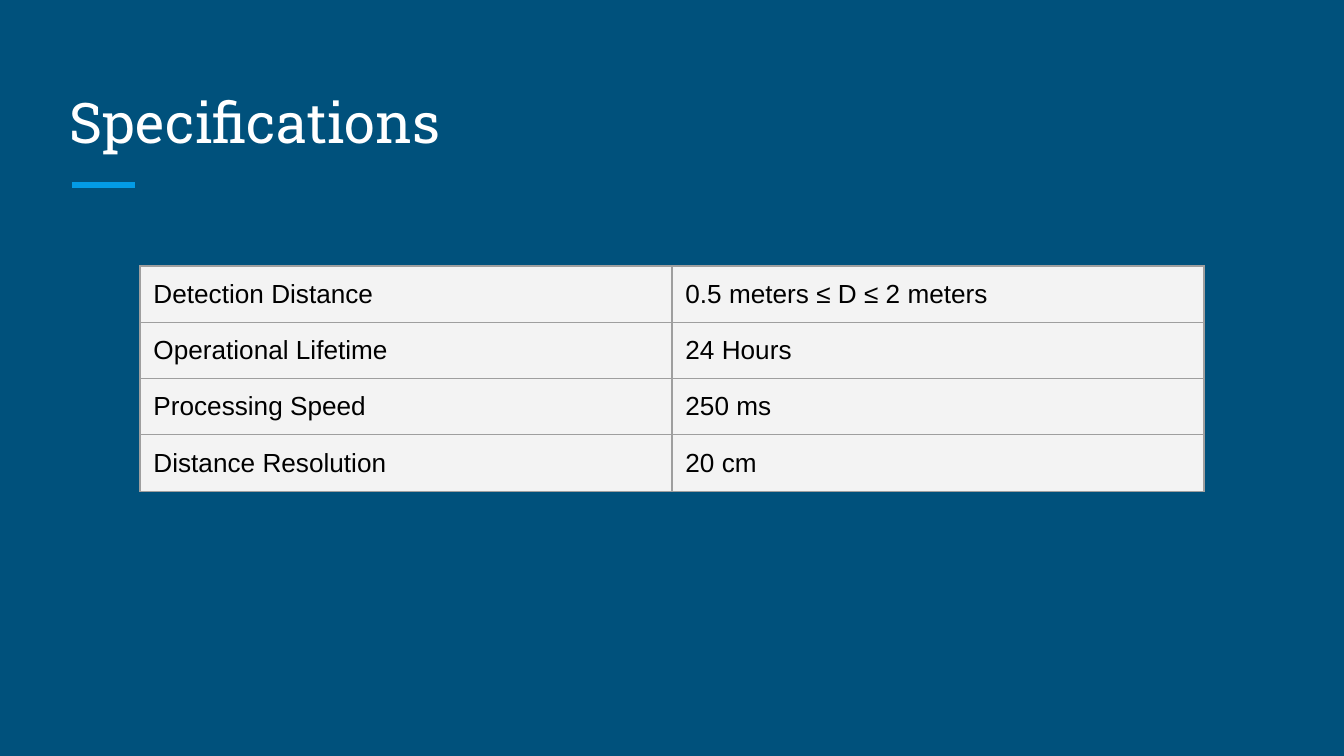
"""Build the Specifications slide: a title, an accent rule and a table."""
from lxml import etree
from pptx import Presentation
from pptx.dml.color import RGBColor
from pptx.enum.shapes import MSO_CONNECTOR
from pptx.enum.text import MSO_ANCHOR, PP_ALIGN
from pptx.oxml.ns import qn
from pptx.util import Emu, Pt

TITLE = "Specifications"
SPECIFICATIONS = [
    ("Detection Distance", "0.5 meters ≤ D ≤ 2 meters"),
    ("Operational Lifetime", "24 Hours"),
    ("Processing Speed", "250 ms"),
    ("Distance Resolution", "20 cm"),
]
COLORS = {
    "background": "00517C",
    "accent": "039BE5",
    "title": "FFFFFF",
    "text": "000000",
    "cell": "F3F3F3",
    "border": "9E9E9E",
}
SLIDE_SIZE = (1344, 756)
TITLE_BOX = (56, 67, 1230, 101)
ACCENT_LINE = (72, 185, 135, 185)
TABLE_LEFT, TABLE_TOP = 140, 266
COLUMN_WIDTH, ROW_HEIGHT = 532, 56
TITLE_ONLY = 5
STRAIGHT = MSO_CONNECTOR.STRAIGHT
BOTTOM, TOP = MSO_ANCHOR.BOTTOM, MSO_ANCHOR.TOP
LEFT = PP_ALIGN.LEFT


def px(length):
    """Turn pixels into EMU."""
    return Emu(round(length * 914400 / 134.4))


def color(name):
    """Look up a palette color."""
    return RGBColor.from_string(COLORS[name])


def write(frame, text, *, font, size, fill):
    """Put one formatted, left-aligned paragraph in a text frame."""
    para = frame.paragraphs[0]
    para.alignment = LEFT
    span = para.add_run()
    span.text = text
    span.font.name = font
    span.font.size = Pt(size)
    span.font.color.rgb = color(fill)


def set_margins(box):
    """Give a cell or text frame equal margins."""
    box.margin_left = box.margin_right = Pt(7.2)
    box.margin_top = box.margin_bottom = Pt(7.2)


def add_borders(cell):
    """Draw a thin line on all four sides of a cell."""
    properties = cell._tc.get_or_add_tcPr()
    for side in ("lnL", "lnR", "lnT", "lnB"):
        line = etree.SubElement(properties, qn(f"a:{side}"), w=str(Pt(0.75)))
        fill = etree.SubElement(line, qn("a:solidFill"))
        etree.SubElement(fill, qn("a:srgbClr"), val=COLORS["border"])


def add_title(page):
    """Place the title and the accent line below it."""
    title = page.shapes.title
    title.left, title.top, title.width, title.height = map(px, TITLE_BOX)
    frame = title.text_frame
    frame.word_wrap = True
    frame.vertical_anchor = BOTTOM
    set_margins(frame)
    write(frame, TITLE, font="Roboto Slab", size=30, fill="title")

    accent = page.shapes.add_connector(STRAIGHT, *map(px, ACCENT_LINE))
    accent.line.color.rgb = color("accent")
    accent.line.width = Pt(3)
    etree.SubElement(accent._element.spPr, qn("a:effectLst"))


def add_specifications(page):
    """Place the table of specifications."""
    rows, columns = len(SPECIFICATIONS), len(SPECIFICATIONS[0])
    table = page.shapes.add_table(
        rows, columns, px(TABLE_LEFT), px(TABLE_TOP),
        px(columns * COLUMN_WIDTH), px(rows * ROW_HEIGHT),
    ).table
    table.first_row = table.horz_banding = False
    for row, values in zip(table.rows, SPECIFICATIONS):
        row.height = px(ROW_HEIGHT)
        for cell, value in zip(row.cells, values):
            set_margins(cell)
            cell.vertical_anchor = TOP
            add_borders(cell)
            cell.fill.solid()
            cell.fill.fore_color.rgb = color("cell")
            write(cell.text_frame, value, font="Arial", size=14, fill="text")


def main():
    """Create and save the deck."""
    deck = Presentation()
    deck.slide_width, deck.slide_height = map(px, SLIDE_SIZE)
    page = deck.slides.add_slide(deck.slide_layouts[TITLE_ONLY])
    page.background.fill.solid()
    page.background.fill.fore_color.rgb = color("background")
    add_title(page)
    add_specifications(page)
    deck.save("out.pptx")


if __name__ == "__main__":
    main()
